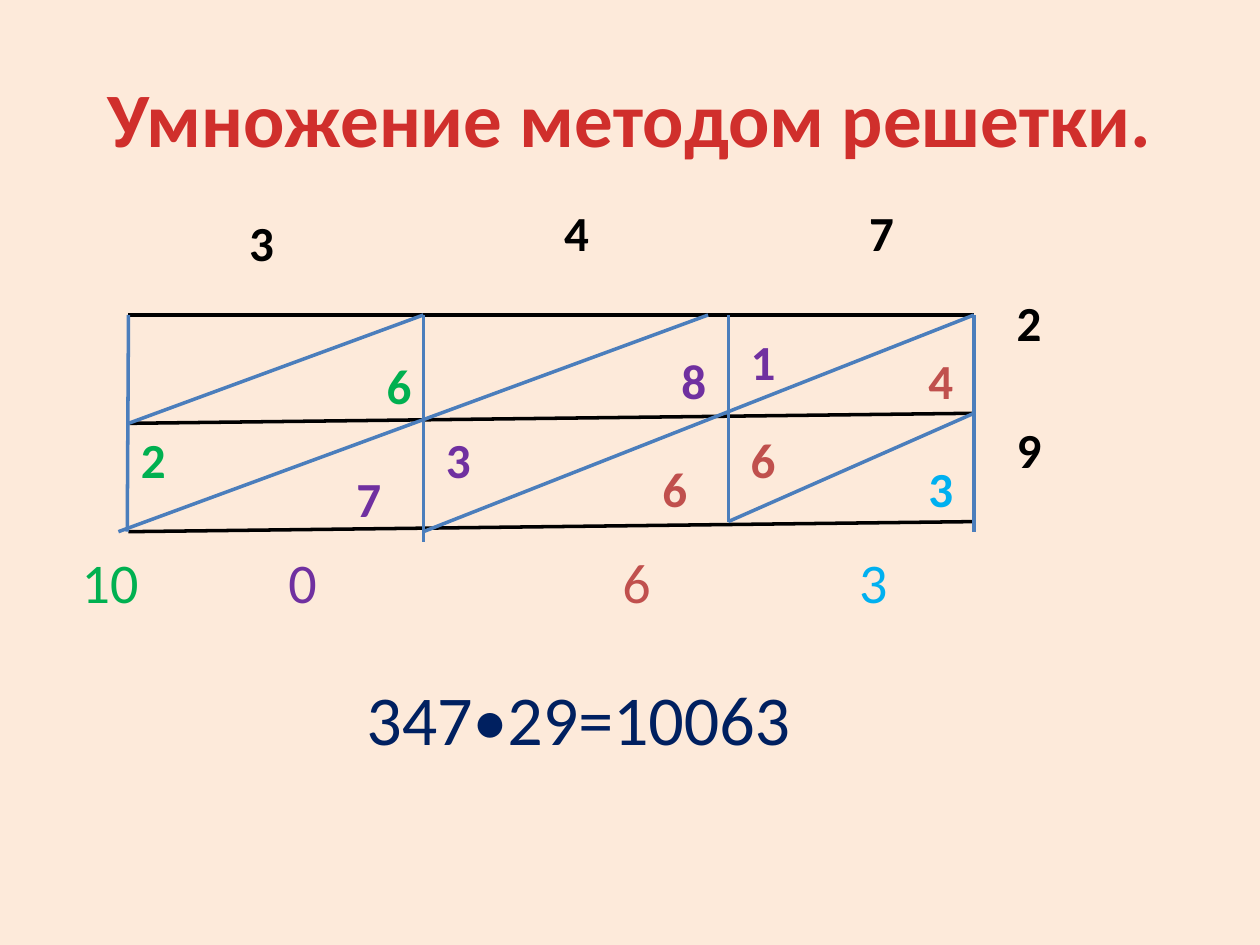
from lxml.etree import SubElement
from pptx import Presentation
from pptx.dml.color import RGBColor
from pptx.enum.shapes import MSO_CONNECTOR as Connector
from pptx.enum.text import MSO_ANCHOR as Anchor, PP_ALIGN as Align
from pptx.oxml.ns import qn
from pptx.util import Inches, Pt

BLACK, STEEL, NAVY, TITLE_RED = "000000", "4B7EBC", "002060", "D02F2C"
GREEN, PURPLE, RED, CYAN = "00B050", "7030A0", "C0504D", "00B0F0"


def rgb(color):
    return RGBColor.from_string(color)


def add_text(slide, box, text, size, color, bold=False, align=Align.LEFT,
             anchor=Anchor.TOP, wrap=True):
    frame = slide.shapes.add_textbox(*map(Inches, box)).text_frame
    frame.word_wrap = wrap
    frame.vertical_anchor = anchor
    paragraph = frame.paragraphs[0]
    paragraph.text = text
    paragraph.alignment = align
    font = paragraph.font
    font.name, font.size, font.bold = "Calibri", Pt(size), bold
    font.color.rgb = rgb(color)


def add_line(slide, start, end, color):
    line = slide.shapes.add_connector(
        Connector.STRAIGHT, *map(Inches, (*start, *end)))
    line.line.color.rgb = rgb(color)
    line.line.width = Pt(2)
    SubElement(line._element.spPr, qn("a:effectLst"))


def add_title(slide, box):
    add_text(slide, box, "Умножение методом решетки.", 44, TITLE_RED,
             bold=True, align=Align.CENTER, anchor=Anchor.MIDDLE)


def add_lattice(slide, box):
    """Draw the rows, columns and diagonals of the grid; some overshoot it."""
    left, top, width, height = box
    row = height / 2
    slope = 0.08
    second, third = 2.34, 4.76

    rows = [((0, 0), (width, 0))]
    rows += [((0, n * row), (width, n * row - slope)) for n in (1, 2)]
    columns = [
        ((0, 0), (-0.01, height)),
        ((second, 0), (second, height + slope)),
        ((third, 0), (third, height - slope)),
        ((width, 0), (width, height)),
    ]
    diagonals = [
        ((0, row), (second, 0)),
        ((second, height), (width, 0)),
        ((-0.08, height), (4.6, 0)),
        ((third, height - slope), (width, row - slope)),
    ]
    for lines, color in ((rows, BLACK), (columns + diagonals, STEEL)):
        for (x1, y1), (x2, y2) in lines:
            add_line(slide, (left + x1, top + y1), (left + x2, top + y2), color)


def add_digits(slide, box):
    """Place the factors around the grid and the partial products in it."""
    left, top, _, _ = box
    factors = [
        ("3", 0.86, -0.86), ("4", 3.36, -0.94), ("7", 5.78, -0.94),
        ("2", 6.95, -0.23), ("9", 6.95, 0.78),
    ]
    products = [
        ("6", 1.95, 0.27, GREEN), ("8", 4.29, 0.23, PURPLE),
        ("1", 4.84, 0.08, PURPLE), ("4", 6.25, 0.23, RED),
        ("3", 6.25, 1.09, CYAN), ("6", 4.84, 0.86, RED),
        ("6", 4.14, 1.09, RED), ("3", 2.42, 0.86, PURPLE),
        ("7", 1.71, 1.17, PURPLE), ("2", 0, 0.86, GREEN),
    ]
    for digit, x, y, color in [(*f, BLACK) for f in factors] + products:
        add_text(slide, (left + x, top + y, 0.4, 0.57), digit, 28, color,
                 bold=True)


def add_result(slide, box):
    """Place the diagonal sums with the finished equation below them."""
    left, top, _, _ = box
    sums = [("10", 0, GREEN), ("0", 1.64, PURPLE),
            ("6", 4.29, RED), ("3", 6.17, CYAN)]
    for total, x, color in sums:
        add_text(slide, (left + x, top, 0.78, 0.64), total, 32, color)
    add_text(slide, (left + 2.26, top + 1.01, 3.6, 0.77), "347•29=10063", 40,
             NAVY, wrap=False)


def main():
    deck = Presentation()
    deck.slide_width, deck.slide_height = Inches(10), Inches(7.5)
    slide = deck.slides.add_slide(deck.slide_layouts[6])
    background = slide.background.fill
    background.solid()
    background.fore_color.rgb = rgb("FDEADA")

    lattice = (1.02, 2.5, 6.71, 1.72)
    add_title(slide, (0.5, 0.3, 9, 1.25))
    add_lattice(slide, lattice)
    add_digits(slide, lattice)
    add_result(slide, (0.55, 4.3, 6.95, 1.78))
    deck.save("out.pptx")


if __name__ == "__main__":
    main()
